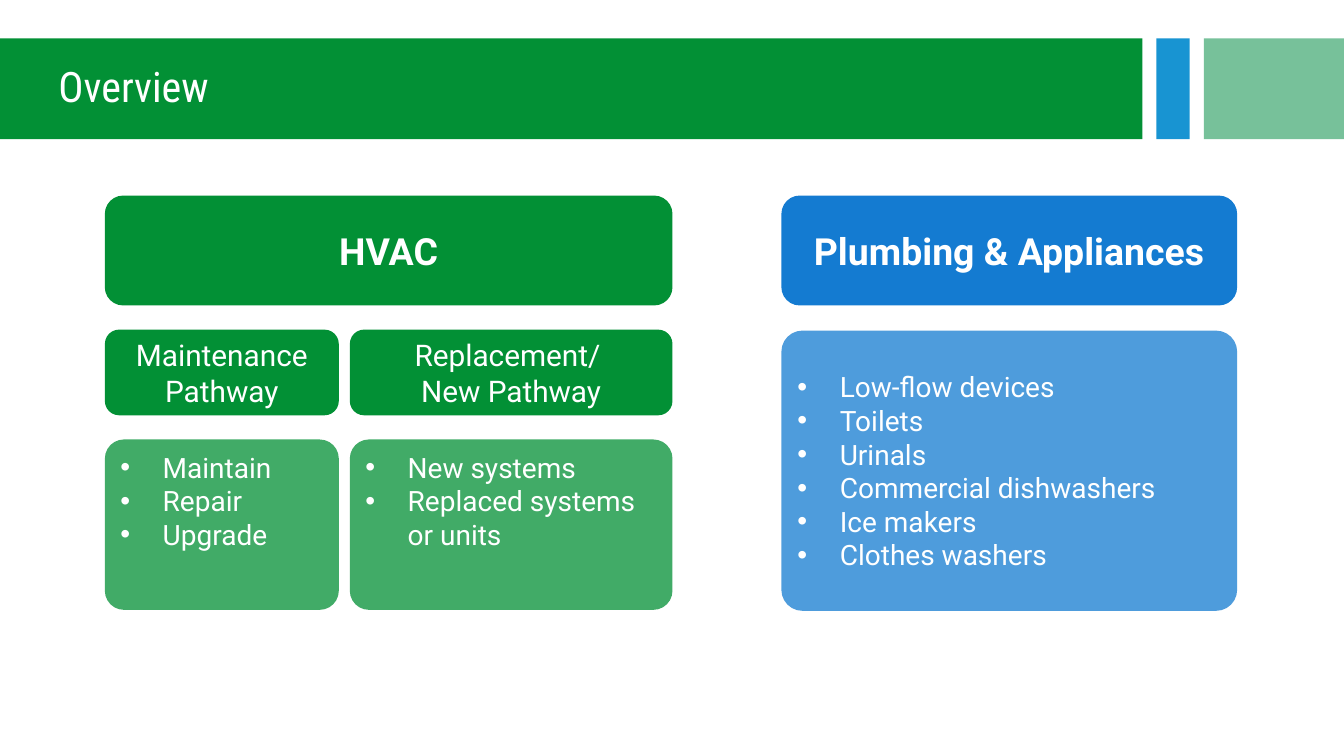
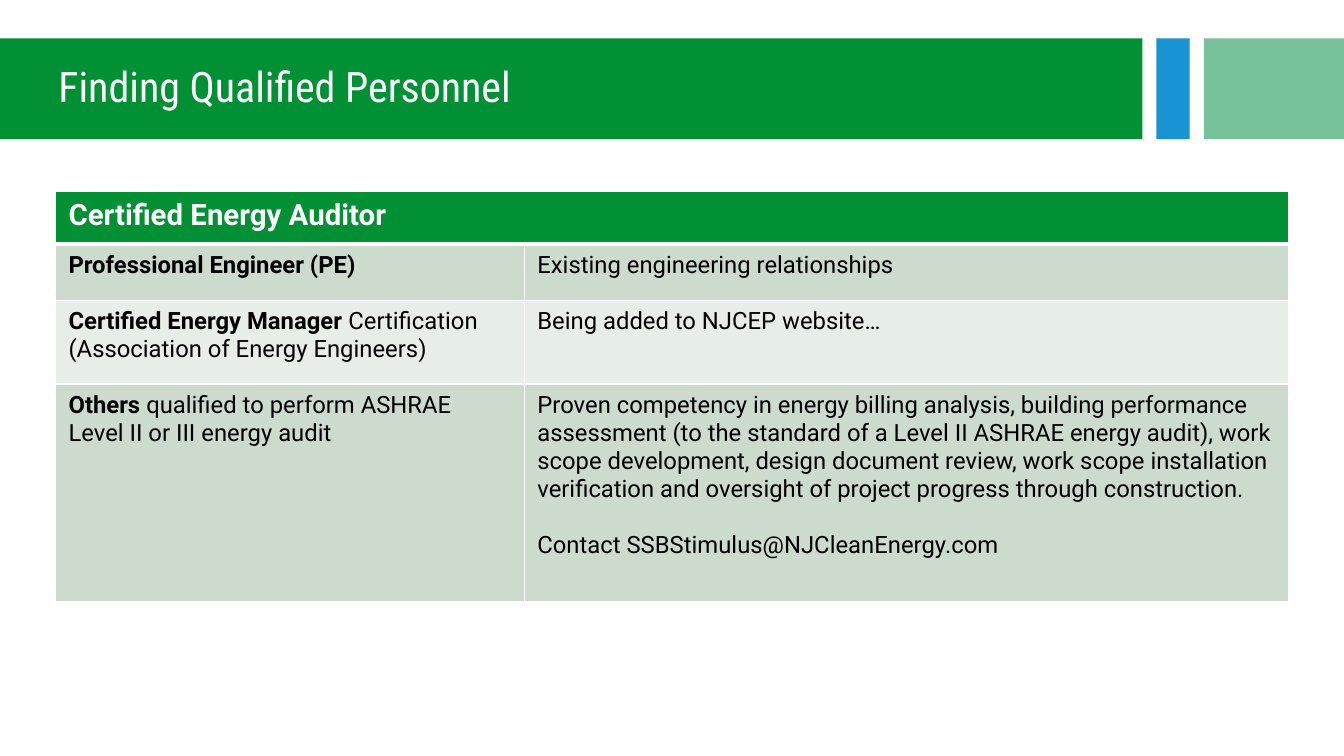
from lxml import etree
from pptx import Presentation
from pptx.dml.color import RGBColor
from pptx.enum import shapes, text
from pptx.oxml import ns
from pptx.util import Inches, Pt

GREEN = RGBColor(0x02, 0x90, 0x35)
SOFT_GREEN = RGBColor(0x77, 0xC1, 0x9A)
BLUE = RGBColor(0x14, 0x7B, 0xD1)
BAND_BLUE = RGBColor(0x18, 0x94, 0xD2)
ROW_DARK = RGBColor(0xCC, 0xDB, 0xCE)
ROW_LIGHT = RGBColor(0xE7, 0xEE, 0xE8)
WHITE = RGBColor(0xFF, 0xFF, 0xFF)
BLACK = RGBColor(0x00, 0x00, 0x00)
BODY_FONT = "Roboto"
TITLE_FONT = "Roboto Condensed"


def add_xml(parent, tag, **attributes):
    return etree.SubElement(parent, ns.qn(tag), attributes)


class Deck:
    def __init__(self):
        self.presentation = Presentation()
        self.presentation.slide_width = Inches(13.33)
        self.presentation.slide_height = Inches(7.5)
        self.slide = None

    def start_slide(self, title):
        """Add a slide with the three header bands and its title."""
        self.slide = self.presentation.slides.add_slide(self.presentation.slide_layouts[6])
        for left, width, color in ((11.47, 0.33, BAND_BLUE), (11.94, 1.39, SOFT_GREEN)):
            self.shape(shapes.MSO_SHAPE.RECTANGLE, left, 0.38, width, 1, color)
        band = self.shape(shapes.MSO_SHAPE.RECTANGLE, -0.02, 0.38, 11.35, 1, GREEN)
        band.text_frame.margin_left = Inches(0.6)
        paragraph = band.text_frame.paragraphs[0]
        paragraph.text = title
        paragraph.alignment = text.PP_ALIGN.LEFT
        paragraph.line_spacing = 0.9
        self.font(paragraph, 30, WHITE, name=TITLE_FONT)

    def font(self, paragraph, size, color, bold=None, name=BODY_FONT):
        font = paragraph.font
        font.name, font.size, font.bold = name, Pt(size), bold
        font.color.rgb = color

    def shape(self, kind, left, top, width, height, color):
        shape = self.slide.shapes.add_shape(
            kind, Inches(left), Inches(top), Inches(width), Inches(height))
        shape.shadow.inherit = False
        shape.fill.solid()
        shape.fill.fore_color.rgb = color
        shape.line.fill.background()
        shape.text_frame.word_wrap = True
        shape.text_frame.vertical_anchor = text.MSO_ANCHOR.MIDDLE
        return shape

    def heading(self, left, top, width, height, color, lines, size, bold=False):
        box = self.shape(shapes.MSO_SHAPE.ROUNDED_RECTANGLE, left, top, width, height, color)
        box.text_frame.text = "\n".join(lines)
        for paragraph in box.text_frame.paragraphs:
            paragraph.alignment = text.PP_ALIGN.CENTER
            self.font(paragraph, size, WHITE, bold)

    def bullet_box(self, left, top, width, height, color, items, corner, anchor):
        box = self.shape(shapes.MSO_SHAPE.ROUNDED_RECTANGLE, left, top, width, height, color)
        box.adjustments[0] = corner
        add_xml(box.element.spPr.find(".//" + ns.qn("a:srgbClr")), "a:alpha", val="75000")
        frame = box.text_frame
        frame.vertical_anchor = anchor
        frame.text = "\n".join(items)
        indent = Inches(0.42)
        for paragraph in frame.paragraphs:
            paragraph.alignment = text.PP_ALIGN.LEFT
            properties = paragraph._p.get_or_add_pPr()
            properties.set("marL", str(indent))
            properties.set("indent", str(-indent))
            add_xml(properties, "a:buFont", typeface="Arial")
            add_xml(properties, "a:buChar", char="•")
            self.font(paragraph, 20, WHITE)

    def table(self, left, top, widths, heights, rows):
        """Draw rows of cells; a cell is a list of paragraphs of (text, bold) runs."""
        table = self.slide.shapes.add_table(
            len(rows), len(widths), Inches(left), Inches(top),
            Inches(sum(widths)), Inches(sum(heights))).table
        table.horz_banding = False
        for column, width in zip(table.columns, widths):
            column.width = Inches(width)
        for row_index, (height, row) in enumerate(zip(heights, rows)):
            table.rows[row_index].height = Inches(height)
            fill = GREEN if row_index == 0 else (ROW_LIGHT, ROW_DARK)[row_index % 2]
            for column_index in range(len(widths)):
                cell = table.cell(row_index, column_index)
                self.cell_style(cell, fill, row_index)
                if column_index < len(row):
                    self.cell_text(cell, row[column_index], row_index == 0)
        table.cell(0, 0).merge(table.cell(0, len(widths) - 1))

    def cell_style(self, cell, fill, row_index):
        properties = cell._tc.get_or_add_tcPr()
        thick_side = {0: "B", 1: "T"}.get(row_index)
        for side in "LRTB":
            width = Pt(3 if side == thick_side else 1)
            line = add_xml(properties, "a:ln" + side, w=str(width))
            add_xml(add_xml(line, "a:solidFill"), "a:srgbClr", val=str(WHITE))
        cell.fill.solid()
        cell.fill.fore_color.rgb = fill
        cell.margin_left = cell.margin_right = Inches(0.13)
        cell.margin_top = cell.margin_bottom = Inches(0.07)

    def cell_text(self, cell, paragraphs, is_header):
        frame = cell.text_frame
        for index, runs in enumerate(paragraphs):
            paragraph = frame.add_paragraph() if index else frame.paragraphs[0]
            self.font(paragraph, 21 if is_header else 17, WHITE if is_header else BLACK)
            for words, bold in runs:
                run = paragraph.add_run()
                run.text = words
                run.font.bold = bold
                run.font.name = BODY_FONT
                run.font.size = paragraph.font.size
                run.font.color.rgb = paragraph.font.color.rgb
        return frame


def overview(deck):
    deck.start_slide("Overview")
    heading_top, pathway_top, list_top, bottom = 1.94, 3.27, 4.36, 6.05
    deck.heading(7.75, heading_top, 4.52, 1.09, BLUE, ["Plumbing & Appliances"], 26.7, True)
    deck.bullet_box(
        7.75, pathway_top + 0.01, 4.52, bottom - pathway_top, BLUE,
        ["Low-flow devices", "Toilets", "Urinals", "Commercial dishwashers",
         "Ice makers", "Clothes washers"], 0.075, text.MSO_ANCHOR.MIDDLE)
    deck.heading(1.04, heading_top, 5.63, 1.09, GREEN, ["HVAC"], 26.7, True)
    pathways = (
        (1.04, 2.32, ["Maintenance Pathway"], ["Maintain", "Repair", "Upgrade"]),
        (3.47, 3.2, ["Replacement/ ", "New Pathway"],
         ["New systems", "Replaced systems or units"]),
    )
    for left, width, name, items in pathways:
        deck.heading(left, pathway_top, width, 0.85, GREEN, name, 21.3)
        deck.bullet_box(left, list_top, width, bottom - list_top, GREEN, items,
                        0.112, text.MSO_ANCHOR.TOP)


def personnel(deck):
    deck.start_slide("Finding Qualified Personnel")
    competency = (
        "Proven competency in energy billing analysis, building performance assessment "
        "(to the standard of a Level II ASHRAE energy audit), work scope development, "
        "design document review, work scope installation verification and oversight of "
        "project progress through construction.")
    rows = [
        [[[("Certified Energy Auditor", True)]]],
        [[[("Professional Engineer (PE)", True)]],
         [[("Existing engineering relationships", False)]]],
        [[[("Certified Energy Manager ", True), ("Certification", False)],
          [("(Association of Energy Engineers)", False)]],
         [[("Being added to NJCEP website…", False)]]],
        [[[("Others", True),
           (" qualified to perform ASHRAE Level II or III energy audit", False)]],
         [[(competency, False)],
          [("Contact SSBStimulus@NJCleanEnergy.com", False)]]],
    ]
    deck.table(0.55, 1.9, (4.65, 7.58), (0.52, 0.56, 0.83, 2.16), rows)
    table = deck.slide.shapes[-1].table
    table.cell(3, 1).text_frame.paragraphs[1].space_before = Pt(20)


def main():
    deck = Deck()
    overview(deck)
    personnel(deck)
    deck.presentation.save("out.pptx")


if __name__ == "__main__":
    main()
